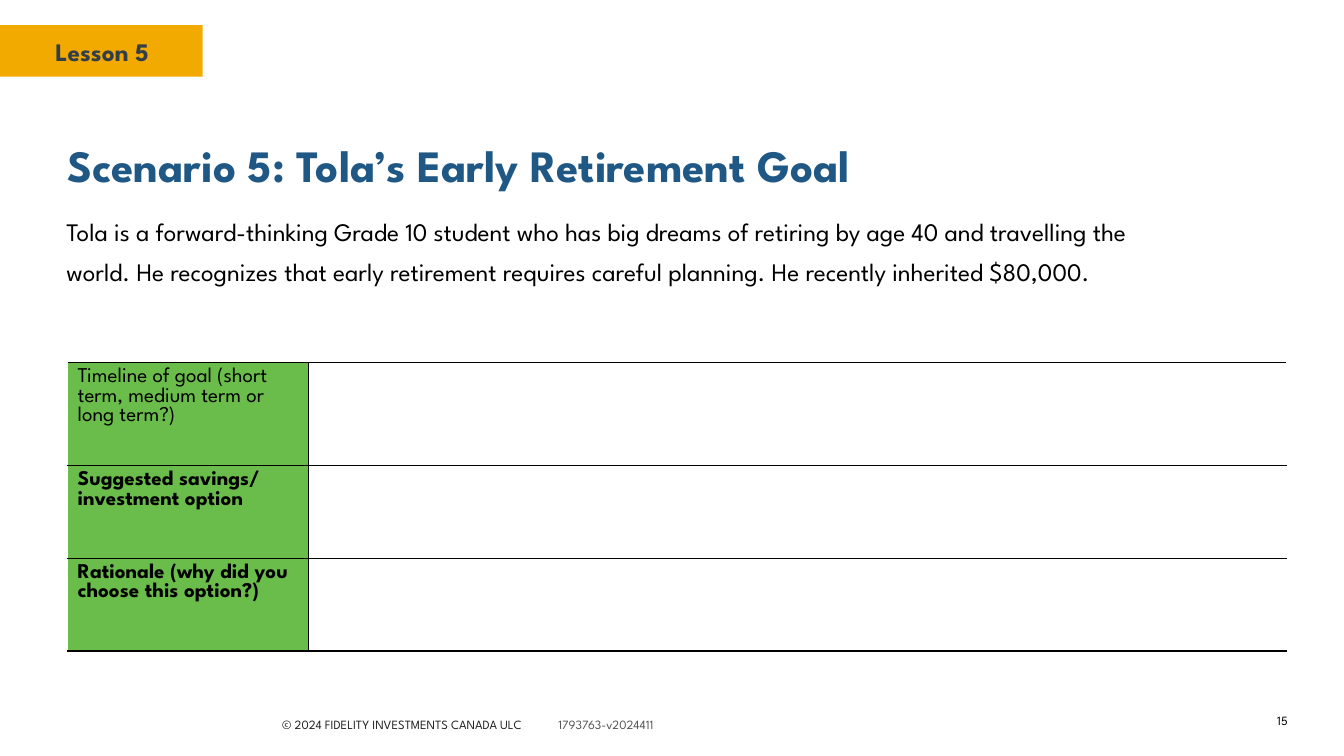
from dataclasses import dataclass

from lxml.etree import SubElement
from pptx import Presentation
from pptx.dml.color import RGBColor
from pptx.enum.shapes import MSO_SHAPE
from pptx.enum.text import MSO_ANCHOR, MSO_AUTO_SIZE, PP_ALIGN
from pptx.oxml.ns import qn
from pptx.util import Inches, Pt

# Content
LESSON = "Lesson 5"
TITLE = "Scenario 5: Tola’s Early Retirement Goal"
STORY = (
    "Tola is a forward-thinking Grade 10 student who has big dreams of retiring "
    "by age 40 and travelling the world. He recognizes that early retirement "
    "requires careful planning. He recently inherited $80,000."
)
COPYRIGHT = "© 2024 FIDELITY INVESTMENTS CANADA ULC"
VERSION = "1793763-v2024411"
PAGE_NUMBER = "15"
# (lines of the label, bold, row height)
QUESTIONS = [
    (["Timeline of goal (short term, medium term or long term?)"], False, 1.02),
    (["Suggested savings/", "investment option"], True, 0.92),
    (["Rationale (why did you choose this option?)"], True, 0.92),
]
COLUMN_WIDTHS = [2.39, 9.7]


@dataclass(frozen=True)
class Theme:
    font: str = "League Spartan"
    amber: str = "F2A900"
    slate: str = "333F48"
    blue: str = "205885"
    green: str = "6ABD4A"
    black: str = "000000"
    white: str = "FFFFFF"
    charcoal: str = "222222"
    gray: str = "545454"
    title_size: int = 32
    body_size: int = 18
    table_size: int = 15
    footer_size: int = 9


THEME = Theme()


def add_span(para, text, size, color=THEME.black, bold=False):
    span = para.add_run()
    span.text = text
    span.font.name = THEME.font
    span.font.size = Pt(size)
    span.font.bold = bold
    span.font.color.rgb = RGBColor.from_string(color)


def add_box(page, left, top, width, height, anchor=MSO_ANCHOR.TOP):
    """Add a wrapping text box and return its first paragraph."""
    box = page.shapes.add_textbox(
        Inches(left), Inches(top), Inches(width), Inches(height)
    )
    box.text_frame.word_wrap = True
    box.text_frame.vertical_anchor = anchor
    return box.text_frame.paragraphs[0]


def set_borders(cell, **colors):
    """Draw 1 pt borders; the keys are lnL, lnR, lnT and lnB."""
    properties = cell._tc.get_or_add_tcPr()
    for position, (side, color) in enumerate(colors.items()):
        line = SubElement(properties, qn(f"a:{side}"), w=str(Pt(1)))
        fill = SubElement(line, qn("a:solidFill"))
        SubElement(fill, qn("a:srgbClr"), val=color)
        properties.insert(position, line)


def add_lesson_tab(page):
    tab = page.shapes.add_shape(
        MSO_SHAPE.RECTANGLE, 0, Inches(0.25), Inches(2.01), Inches(0.51)
    )
    tab.shadow.inherit = False
    tab.fill.solid()
    tab.fill.fore_color.rgb = RGBColor.from_string(THEME.amber)
    tab.line.fill.background()
    para = add_box(page, 0.45, 0.31, 1.31, 0.4, MSO_ANCHOR.MIDDLE)
    add_span(para, LESSON, THEME.body_size, THEME.slate, bold=True)


def add_title(page):
    title = page.shapes.title
    title.left, title.top = Inches(0.57), Inches(1.27)
    title.width, title.height = Inches(12.2), Inches(0.73)
    title.text_frame.auto_size = MSO_AUTO_SIZE.NONE
    title.text_frame.vertical_anchor = MSO_ANCHOR.MIDDLE
    para = title.text_frame.paragraphs[0]
    para.alignment = PP_ALIGN.LEFT
    add_span(para, TITLE, THEME.title_size, THEME.blue, bold=True)


def add_story(page):
    para = add_box(page, 0.56, 2, 11.26, 1.01)
    para.line_spacing = 1.33
    add_span(para, STORY, THEME.body_size)


def add_question_table(page):
    heights = [height for _, _, height in QUESTIONS]
    table = page.shapes.add_table(
        len(QUESTIONS), len(COLUMN_WIDTHS), Inches(0.67), Inches(3.6),
        Inches(sum(COLUMN_WIDTHS)), Inches(sum(heights)),
    ).table
    table.first_row = False
    table.horz_banding = False
    for column, width in zip(table.columns, COLUMN_WIDTHS):
        column.width = Inches(width)

    for row, (lines, bold, height) in zip(table.rows, QUESTIONS):
        row.height = Inches(height)
        label, answer = row.cells
        label.fill.solid()
        label.fill.fore_color.rgb = RGBColor.from_string(THEME.green)
        answer.fill.background()
        set_borders(label, lnL=THEME.white, lnR=THEME.black,
                    lnT=THEME.black, lnB=THEME.black)
        set_borders(answer, lnL=THEME.black, lnR=THEME.white,
                    lnT=THEME.black, lnB=THEME.black)
        frame = label.text_frame
        for index, line in enumerate(lines):
            para = frame.add_paragraph() if index else frame.paragraphs[0]
            add_span(para, line, THEME.table_size, bold=bold)


def add_footer(page):
    # A tab stop separates the copyright line from the version
    para = add_box(page, 2.7, 7.06, 4.3, 0.25)
    stops = SubElement(para._p.get_or_add_pPr(), qn("a:tabLst"))
    SubElement(stops, qn("a:tab"), pos=str(Inches(2.74)), algn="l")
    add_span(para, COPYRIGHT, THEME.footer_size, THEME.charcoal)
    add_span(para, "\t" + VERSION, THEME.footer_size, THEME.gray)

    number = add_box(page, 12.17, 7.06, 0.7, 0.18, MSO_ANCHOR.MIDDLE)
    number.alignment = PP_ALIGN.RIGHT
    add_span(number, PAGE_NUMBER, THEME.footer_size)


def main():
    deck = Presentation()
    deck.slide_width, deck.slide_height = Inches(13.33), Inches(7.5)
    page = deck.slides.add_slide(deck.slide_layouts[5])
    add_lesson_tab(page)
    add_title(page)
    add_story(page)
    add_question_table(page)
    add_footer(page)
    deck.save("out.pptx")


if __name__ == "__main__":
    main()
